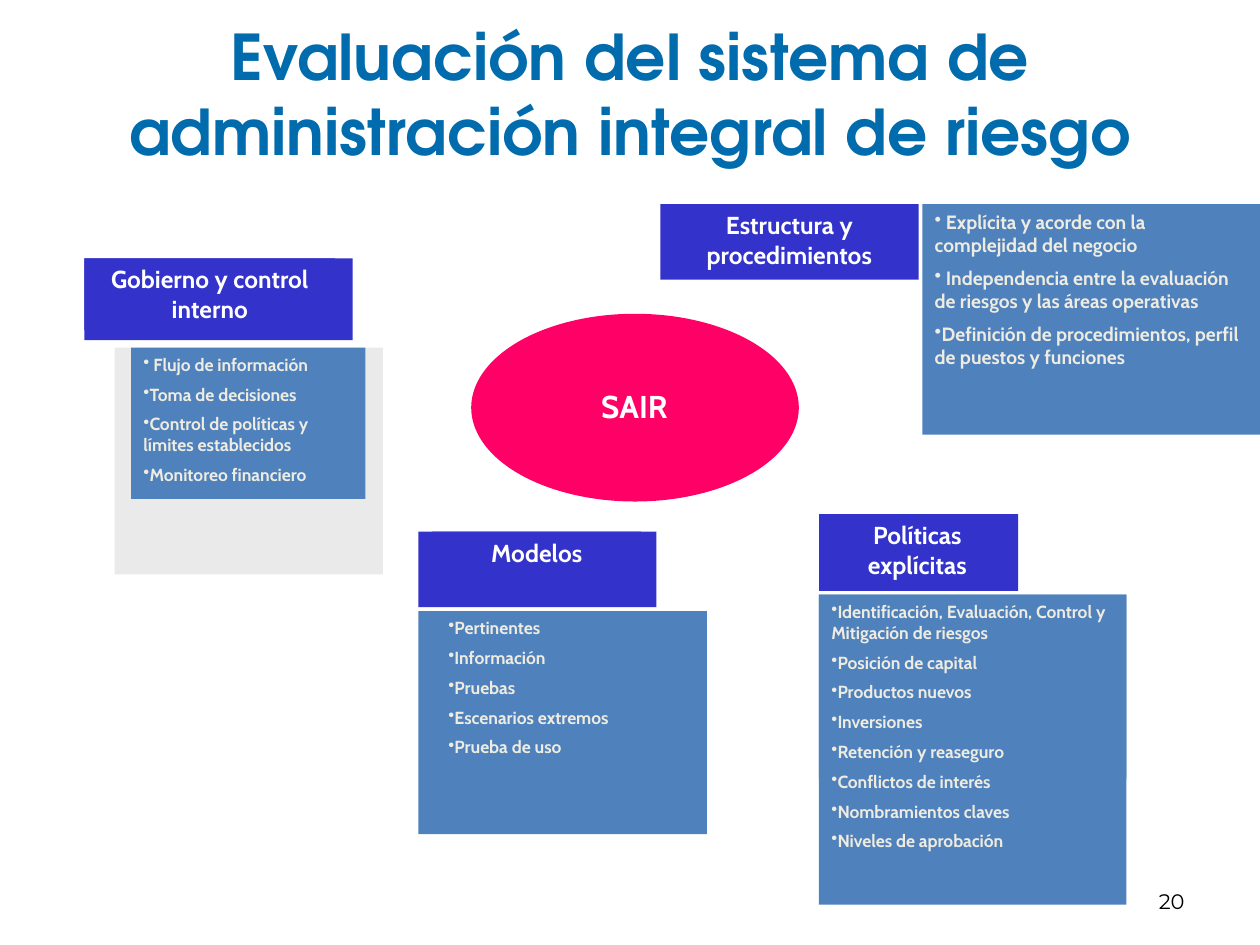
from lxml import etree
from pptx import Presentation
from pptx import util as u
from pptx.dml.color import RGBColor
from pptx.enum import shapes, text
from pptx.oxml.ns import qn

WIDTH, HEIGHT = u.Inches(10), u.Inches(7.5)
COLUMN, ROW = WIDTH / 100, HEIGHT / 75

COLORS = {
    "title": "006BAD", "number": "000000", "center": "FF0066",
    "heading": "3333CC", "heading text": "FFFFFF",
    "list": "4F81BD", "list text": "EEECE1", "backing": "EAEAEA",
}
RECTANGLE = shapes.MSO_SHAPE.RECTANGLE
OVAL = shapes.MSO_SHAPE.OVAL
CENTER, LEFT, RIGHT = text.PP_ALIGN.CENTER, text.PP_ALIGN.LEFT, text.PP_ALIGN.RIGHT

# Places are left, top, width, height in columns and rows: backing, then text area.
HEADINGS = [
    ("Estructura y procedimientos", (52.4, 16.2, 20.5, 6), (53.7, 16.2, 17.9, 5.7)),
    ("Políticas explícitas", (65, 40.8, 15.8, 6.1), (65.9, 40.8, 13.8, 5.7)),
    ("Modelos", (33.2, 42.2, 18.9, 6), (34.3, 42.2, 16.6, 3.4)),
    ("Gobierno y control interno", (6.7, 20.5, 21.3, 6.5), (6.7, 20.5, 19.9, 5.7)),
]
LISTS = [
    ("backing", 10, (9.1, 27.6, 21.3, 18), (10.4, 27.6, 18.6, 12), [
        " Flujo de información",
        "Toma de decisiones",
        "Control de políticas y límites establecidos",
        "Monitoreo financiero",
    ]),
    ("list", 11, (73.6, 16.2, 26.8, 16.1), (73.2, 16.2, 27.2, 18.3), [
        " Explícita y acorde con la complejidad del negocio",
        " Independencia entre la evaluación de riesgos y las áreas operativas",
        "Definición de procedimientos, perfil de puestos y funciones",
    ]),
    ("list", 10, (65, 47.2, 24.4, 14.6), (65, 47.2, 24.4, 24.6), [
        "Identificación, Evaluación, Control y Mitigación de riesgos",
        "Posición de capital",
        "Productos nuevos",
        "Inversiones",
        "Retención y reaseguro",
        "Conflictos de interés",
        "Nombramientos claves",
        "Niveles de aprobación",
    ]),
    ("list", 10, (33.2, 48.5, 22.9, 17.7), (34.6, 48.5, 20, 12.8), [
        "Pertinentes",
        "Información",
        "Pruebas",
        "Escenarios extremos",
        "Prueba de uso",
    ]),
]


def place(left, top, width, height):
    """Turn grid columns and rows into slide lengths."""
    return [round(n) for n in (left * COLUMN, top * ROW, width * COLUMN, height * ROW)]


def add_bullet(para):
    bullet = etree.SubElement(para._p.get_or_add_pPr(), qn("a:buChar"))
    bullet.set("char", "•")


def write(box, lines, size, color, font="Cabin", bold=True, align=CENTER,
          anchor=text.MSO_ANCHOR.TOP, bullets=False, right_inset=0.1):
    frame = box.text_frame
    frame.word_wrap = True
    frame.vertical_anchor = anchor
    frame.margin_right = u.Inches(right_inset)
    for index, line in enumerate(lines):
        para = frame.add_paragraph() if index else frame.paragraphs[0]
        para.alignment = align
        if index:
            para.space_before = u.Pt(size / 2)
        if bullets:
            add_bullet(para)
        span = para.add_run()
        span.text = line
        span.font.name, span.font.size, span.font.bold = font, u.Pt(size), bold
        span.font.color.rgb = RGBColor.from_string(COLORS[color])


def add_block(group, kind, area, color):
    block = group.shapes.add_shape(kind, *place(*area))
    block.shadow.inherit = False
    block.fill.solid()
    block.fill.fore_color.rgb = RGBColor.from_string(COLORS[color])
    block.line.fill.background()
    return block


def add_panel(page, back_area, text_area, back_color, text_color, kind=RECTANGLE):
    """Group a backing shape with the text area on it; return the text area."""
    group = page.shapes.add_group_shape()
    add_block(group, kind, back_area, back_color)
    return add_block(group, RECTANGLE, text_area, text_color)


def add_label(page, area, line, **style):
    box = page.shapes.add_textbox(*place(*area))
    write(box, [line], anchor=text.MSO_ANCHOR.MIDDLE, **style)


def main():
    deck = Presentation()
    deck.slide_width, deck.slide_height = WIDTH, HEIGHT
    page = deck.slides.add_slide(deck.slide_layouts[6])

    add_label(page, (71.7, 69.5, 23.3, 4), "20", size=12, color="number",
              font="Montserrat", bold=False, align=RIGHT)
    add_label(page, (5, 2.1, 90, 10.5),
              "Evaluación del sistema de administración integral de riesgo",
              size=36, color="title", font="TeX Gyre Adventor")

    center = add_panel(page, (37.4, 24.9, 26, 14.9), (42.1, 30.2, 16.5, 4),
                       "center", "center", OVAL)
    write(center, ["SAIR"], 18, "heading text")
    for heading, back_area, text_area in HEADINGS:
        box = add_panel(page, back_area, text_area, "heading", "heading")
        write(box, [heading], 14, "heading text")
    for back_color, size, back_area, text_area, lines in LISTS:
        box = add_panel(page, back_area, text_area, back_color, "list")
        write(box, lines, size, "list text", align=LEFT, bullets=True, right_inset=0.14)

    deck.save("out.pptx")


if __name__ == "__main__":
    main()
